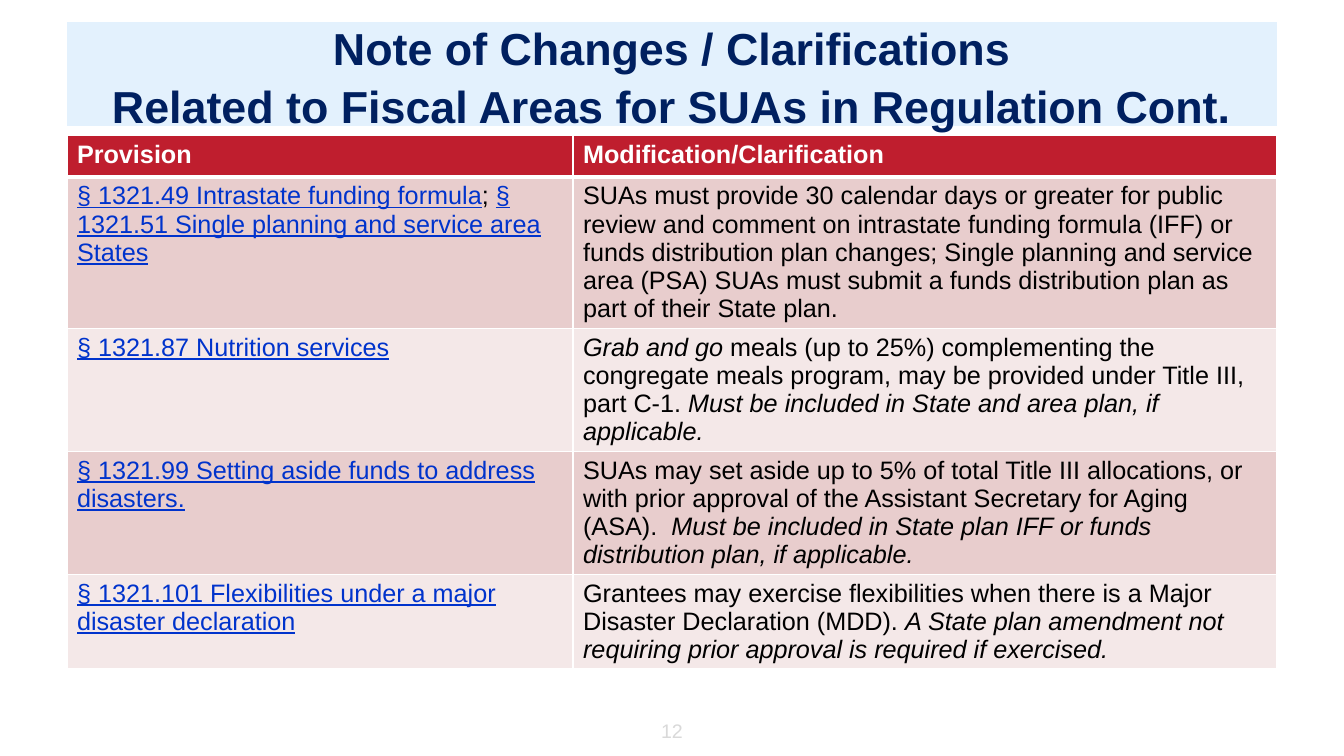
from dataclasses import dataclass

from lxml.etree import SubElement
from pptx import Presentation
from pptx.dml.color import RGBColor
from pptx.enum.text import MSO_ANCHOR, MSO_AUTO_SIZE, PP_ALIGN
from pptx.oxml.ns import qn
from pptx.slide import Slide
from pptx.table import _Cell
from pptx.text.text import _Paragraph
from pptx.util import Inches, Length, Pt

NAVY = RGBColor(0x00, 0x20, 0x60)
PALE_BLUE = RGBColor(0xE3, 0xF1, 0xFD)
RED = RGBColor(0xBF, 0x1E, 0x2E)
ROSE = RGBColor(0xE8, 0xCD, 0xCD)
PALE_ROSE = RGBColor(0xF4, 0xE8, 0xE8)
LINK_BLUE = RGBColor(0x00, 0x33, 0xCC)
BLACK = RGBColor(0x00, 0x00, 0x00)
WHITE = RGBColor(0xFF, 0xFF, 0xFF)
PAGE_GREY = RGBColor(0xD9, 0xD9, 0xD9)

SLIDE_WIDTH, SLIDE_HEIGHT = Inches(13.33), Inches(7.5)

# Row heights as percent of the slide height
HEADER_HEIGHT, LINE_HEIGHT, ROW_PADDING = 5.47, 3.72, 1.33
# Column widths as percent of the slide width
COLUMN_WIDTHS = (37.66, 52.36)


@dataclass(frozen=True)
class Span:
    text: str
    color: RGBColor = BLACK
    bold: bool = False
    italic: bool = False
    underline: bool = False
    size: float = 18


@dataclass(frozen=True)
class Rule:
    provision: tuple[Span, ...]
    change: tuple[Span, ...]
    lines: int


def across(percent: float) -> Length:
    return Length(int(SLIDE_WIDTH * percent / 100))


def down(percent: float) -> Length:
    return Length(int(SLIDE_HEIGHT * percent / 100))


def link(text: str) -> Span:
    return Span(text, LINK_BLUE, underline=True)


def italic(text: str) -> Span:
    return Span(text, italic=True)


HEADINGS = [Span(text, WHITE, bold=True)
            for text in ("Provision", "Modification/Clarification")]

RULES = [
    Rule(
        (link("§ 1321.49 Intrastate funding formula"), Span("; "),
         link("§ 1321.51 Single planning and service area States")),
        (Span("SUAs must provide 30 calendar days or greater for public review and "
              "comment on intrastate funding formula (IFF) or funds distribution plan "
              "changes; Single planning and service area (PSA) SUAs must submit a funds "
              "distribution plan as part of their State plan."),),
        lines=5,
    ),
    Rule(
        (link("§ 1321.87 Nutrition services"),),
        (italic("Grab and go"),
         Span(" meals (up to 25%) complementing the congregate meals program, may be "
              "provided under Title III, part C-1. "),
         italic("Must be included in State and area plan, if applicable.")),
        lines=4,
    ),
    Rule(
        (link("§ 1321.99 Setting aside funds to address disasters."),),
        (Span("SUAs may set aside up to 5% of total Title III allocations, or with prior "
              "approval of the Assistant Secretary for Aging (ASA).  "),
         italic("Must be included in State plan IFF or funds distribution plan, "
                "if applicable.")),
        lines=4,
    ),
    Rule(
        (link("§ 1321.101 Flexibilities under a major disaster declaration"),),
        (Span("Grantees may exercise flexibilities when there is a Major Disaster "
              "Declaration (MDD). "),
         italic("A State plan amendment not requiring prior approval is required "
                "if exercised.")),
        lines=3,
    ),
]


def add_span(paragraph: _Paragraph, span: Span) -> None:
    run = paragraph.add_run()
    run.text = span.text
    font = run.font
    font.name, font.size = "Arial", Pt(span.size)
    font.bold, font.italic, font.underline = span.bold, span.italic, span.underline
    font.color.rgb = span.color


def add_borders(cell: _Cell, top: float, bottom: float) -> None:
    properties = cell._tc.get_or_add_tcPr()
    widths = {"a:lnL": 1, "a:lnR": 1, "a:lnT": top, "a:lnB": bottom}
    for position, (side, width) in enumerate(widths.items()):
        line = SubElement(properties, qn(side), w=str(Pt(width)))
        fill = SubElement(line, qn("a:solidFill"))
        SubElement(fill, qn("a:srgbClr"), val=str(WHITE))
        properties.insert(position, line)


def fill_cell(cell: _Cell, spans: tuple[Span, ...], color: RGBColor,
              top: float = 1, bottom: float = 1) -> None:
    cell.fill.solid()
    cell.fill.fore_color.rgb = color
    add_borders(cell, top, bottom)
    for span in spans:
        add_span(cell.text_frame.paragraphs[0], span)


def add_title(slide: Slide) -> None:
    title = slide.shapes.title
    title.left, title.top = across(5), down(2.93)
    title.width, title.height = across(90), down(13.73)
    title.fill.solid()
    title.fill.fore_color.rgb = PALE_BLUE
    frame = title.text_frame
    frame.auto_size = MSO_AUTO_SIZE.NONE
    frame.word_wrap = True
    frame.vertical_anchor = MSO_ANCHOR.MIDDLE
    heading = frame.paragraphs[0]
    heading.alignment = PP_ALIGN.CENTER
    heading.line_spacing = 1.08
    add_span(heading, Span("Note of Changes / Clarifications", NAVY, bold=True, size=32))
    heading.add_line_break()
    add_span(heading, Span("Related to Fiscal Areas for SUAs in Regulation Cont.",
                           NAVY, bold=True, size=32))


def add_rules_table(slide: Slide) -> None:
    heights = [HEADER_HEIGHT] + [ROW_PADDING + rule.lines * LINE_HEIGHT for rule in RULES]
    table = slide.shapes.add_table(
        len(heights), len(COLUMN_WIDTHS), across(4.98), down(17.95),
        across(sum(COLUMN_WIDTHS)), down(sum(heights))).table
    table.horz_banding = False
    for column, width in zip(table.columns, COLUMN_WIDTHS):
        column.width = across(width)
    for row, height in zip(table.rows, heights):
        row.height = down(height)

    # Header row
    for column, heading in enumerate(HEADINGS):
        fill_cell(table.cell(0, column), (heading,), RED, bottom=3)

    # Provisions in alternating tints
    for row, rule in enumerate(RULES, start=1):
        tint = ROSE if row % 2 else PALE_ROSE
        for column, spans in enumerate((rule.provision, rule.change)):
            fill_cell(table.cell(row, column), spans, tint, top=3 if row == 1 else 1)


def add_page_number(slide: Slide) -> None:
    page = slide.shapes.add_textbox(across(38.33), down(94), across(23.33), down(5.33))
    frame = page.text_frame
    frame.word_wrap = True
    frame.vertical_anchor = MSO_ANCHOR.MIDDLE
    frame.paragraphs[0].alignment = PP_ALIGN.CENTER
    add_span(frame.paragraphs[0], Span("12", PAGE_GREY, size=14))


def main() -> None:
    deck = Presentation()
    deck.slide_width, deck.slide_height = SLIDE_WIDTH, SLIDE_HEIGHT
    slide = deck.slides.add_slide(deck.slide_layouts.get_by_name("Title Only"))
    add_title(slide)
    add_rules_table(slide)
    add_page_number(slide)
    deck.save("out.pptx")


if __name__ == "__main__":
    main()
